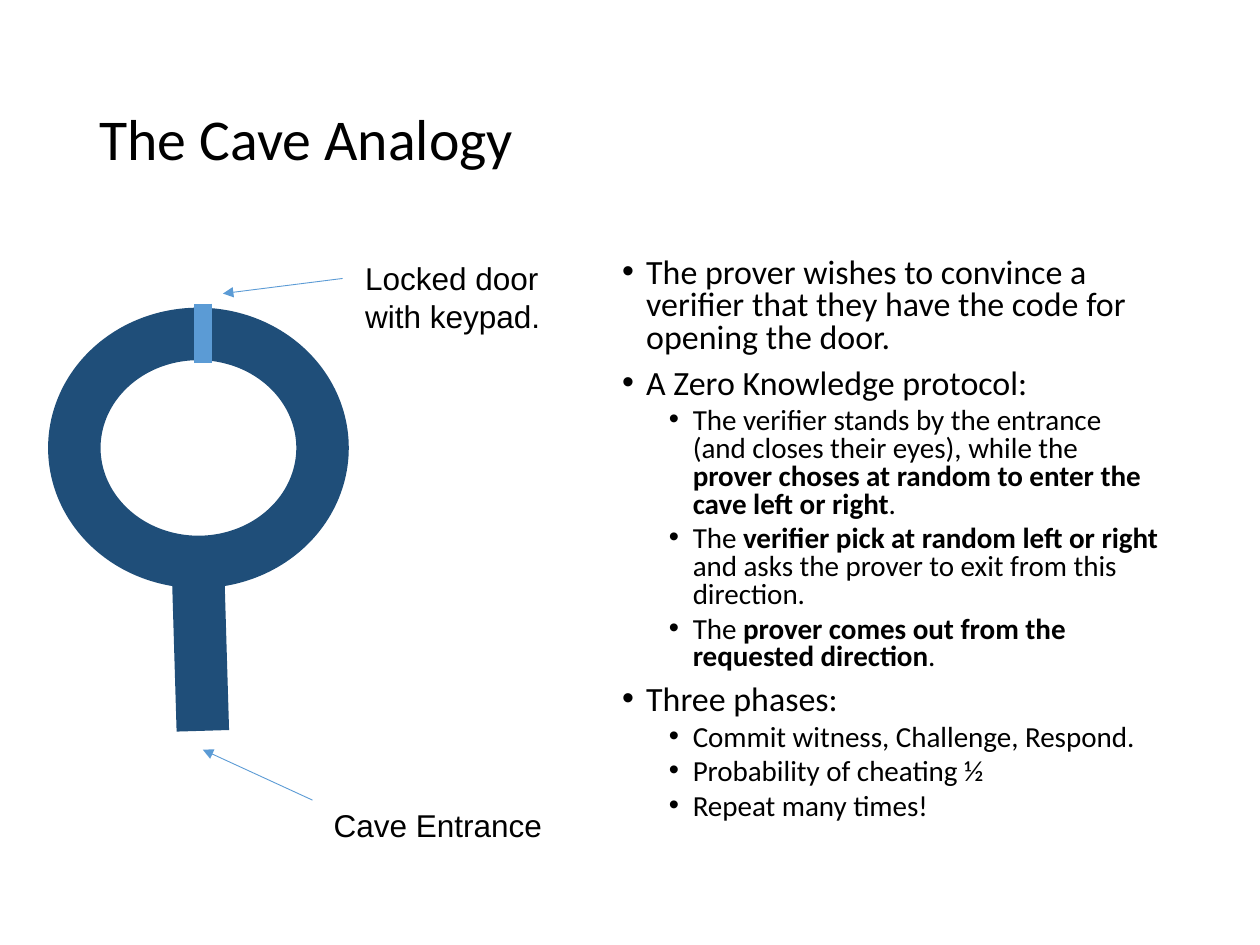
from lxml import etree
from pptx import Presentation
from pptx import util as u
from pptx.dml.color import RGBColor
from pptx.enum import shapes, text
from pptx.oxml.ns import qn

THEME = {
    "ink": "000000", "cave": "1F4E79", "accent": "5B9BD5",
    "head": "Calibri", "label": "Arial",
    "title": 33, "label_size": 18,
    "levels": [
        {"size": 19.4, "before": 7.5, "indent": 0.19},
        {"size": 16.6, "before": 3.8, "indent": 0.56},
    ],
}
HANG = 0.19

TITLE = ("The Cave Analogy", (0.69, 0.4, 8.62, 1.45))
BODY_BOX = (4.84, 2, 4.47, 4.76)
BULLETS = [
    (0, ["The prover wishes to convince a verifier that they have the code for opening the door."]),
    (0, ["A Zero Knowledge protocol:"]),
    (1, ["The verifier stands by the entrance (and closes their eyes), while the ",
         "prover choses at random to enter the cave left or right", "."]),
    (1, ["The ", "verifier pick at random left or right",
         " and asks the prover to exit from this direction."]),
    (1, ["The ", "prover comes out from the requested direction", "."]),
    (0, ["Three phases:"]),
    (1, ["Commit witness, Challenge, Respond."]),
    (1, ["Probability of cheating ½"]),
    (1, ["Repeat many times!"]),
]
RING = (0.59, 2.65, 1.97, 1.81)
LINES = [
    ((1.57, 4.46), (1.61, 5.8), "cave", 30, False),
    ((1.61, 2.41), (1.61, 2.88), "accent", 10, False),
    ((2.48, 6.35), (1.61, 5.95), "accent", 0.5, True),
    ((2.72, 2.21), (1.77, 2.33), "accent", 0.5, True),
]
LABELS = [
    (["Cave Entrance"], (2.55, 6.35, 1.87, 0.4)),
    (["Locked door", "with keypad."], (2.8, 2.01, 1.66, 0.71)),
]


def inches(values):
    return [u.Inches(v) for v in values]


def set_all(obj, **values):
    for name, value in values.items():
        setattr(obj, name, value)


def style(r, font, size, bold=False):
    set_all(r.font, name=font, size=u.Pt(size), bold=bold)
    r.font.color.rgb = RGBColor.from_string(THEME["ink"])


def stroke(sp, color, width):
    sp.line.color.rgb = RGBColor.from_string(THEME[color])
    sp.line.width = u.Pt(width)


def add_title(s):
    words, box = TITLE
    sp = s.shapes.title
    set_all(sp, **dict(zip(("left", "top", "width", "height"), inches(box))))
    tf = sp.text_frame
    set_all(tf, word_wrap=True, auto_size=text.MSO_AUTO_SIZE.NONE,
            vertical_anchor=text.MSO_ANCHOR.MIDDLE)
    p = tf.paragraphs[0]
    set_all(p, alignment=text.PP_ALIGN.LEFT, line_spacing=0.9)
    r = p.add_run()
    r.text = words
    style(r, THEME["head"], THEME["title"])


def add_bullets(s):
    tf = s.shapes.add_textbox(*inches(BODY_BOX)).text_frame
    tf.word_wrap = True
    for i, (level, parts) in enumerate(BULLETS):
        look = THEME["levels"][level]
        p = tf.add_paragraph() if i else tf.paragraphs[0]
        set_all(p, level=level, line_spacing=0.8,
                space_before=u.Pt(look["before"] if i else 0))
        pPr = p._p.get_or_add_pPr()
        pPr.set("marL", str(u.Inches(look["indent"])))
        pPr.set("indent", str(-u.Inches(HANG)))
        etree.SubElement(pPr, qn("a:buFont"), typeface="Arial")
        etree.SubElement(pPr, qn("a:buChar"), char="•")
        for j, part in enumerate(parts):
            r = p.add_run()
            r.text = part
            style(r, THEME["head"], look["size"], bold=j == 1)


def add_ring(s):
    sp = s.shapes.add_shape(shapes.MSO_SHAPE.OVAL, *inches(RING))
    sp.shadow.inherit = False
    sp.fill.background()
    stroke(sp, "cave", 30)


def add_line(s, start, end, color, width, arrow):
    sp = s.shapes.add_connector(shapes.MSO_CONNECTOR.STRAIGHT, *inches(start + end))
    stroke(sp, color, width)
    if arrow:
        etree.SubElement(sp.line._get_or_add_ln(), qn("a:tailEnd"), type="triangle")
    etree.SubElement(sp._element.spPr, qn("a:effectLst"))


def add_label(s, rows, box):
    tf = s.shapes.add_textbox(*inches(box)).text_frame
    set_all(tf, word_wrap=False, auto_size=text.MSO_AUTO_SIZE.SHAPE_TO_FIT_TEXT)
    p = tf.paragraphs[0]
    for i, row in enumerate(rows):
        if i:
            p.add_line_break()
        r = p.add_run()
        r.text = row
        style(r, THEME["label"], THEME["label_size"])


def main():
    prs = Presentation()
    set_all(prs, slide_width=u.Inches(10), slide_height=u.Inches(7.5))
    s = prs.slides.add_slide(prs.slide_layouts[5])
    add_title(s)
    add_bullets(s)
    add_ring(s)
    for line in LINES:
        add_line(s, *line)
    for label in LABELS:
        add_label(s, *label)
    prs.save("out.pptx")


if __name__ == "__main__":
    main()
